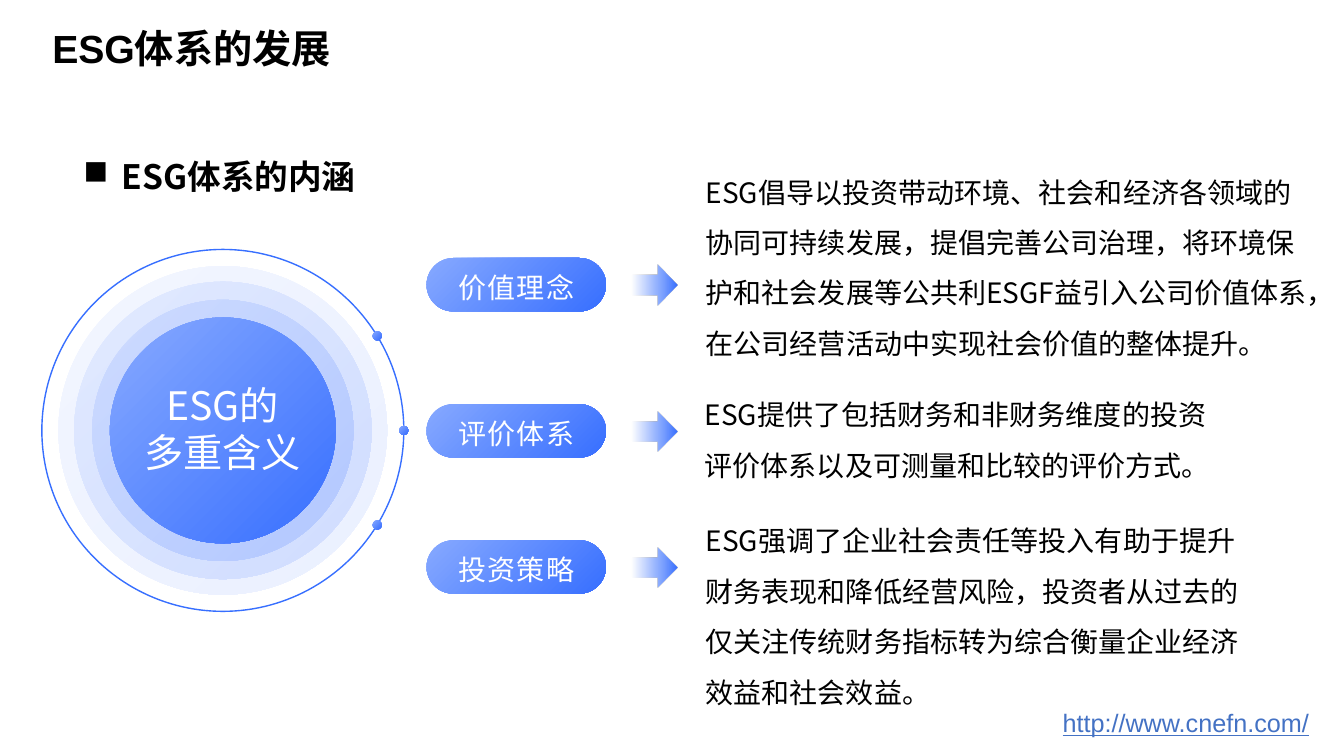
"""Build the slide on the meaning of the ESG system."""
from dataclasses import dataclass, field
from math import cos, radians, sin

from lxml import etree
from pptx import Presentation
from pptx import util as u
from pptx.dml.color import RGBColor
from pptx.enum import lang, shapes, text
from pptx.oxml.ns import qn


@dataclass(frozen=True)
class Theme:
    light: str = "87A9FF"
    deep: str = "376FFF"
    black: str = "000000"
    white: str = "FFFFFF"
    link: str = "4472C4"
    latin: str = "Arial"
    chinese: str = "Noto Sans CJK SC"
    display: int = 28
    heading: int = 24
    body: int = 20
    footer: int = 18


@dataclass(frozen=True)
class Box:
    left: float
    top: float
    width: float
    height: float

    def lengths(self) -> list[int]:
        return [u.Inches(side) for side in (self.left, self.top, self.width, self.height)]


@dataclass(frozen=True)
class Stop:
    position: int
    color: str
    opacity: int = 100


@dataclass(frozen=True)
class Caption:
    box: Box
    lines: list[str]
    size: int
    color: str = "000000"
    name: str = "Noto Sans CJK SC"
    font: dict = field(default_factory=dict)
    paragraph: dict = field(default_factory=dict)
    frame: dict = field(default_factory=dict)
    bullet: str = ""
    spacing: int = 0


@dataclass(frozen=True)
class Meaning:
    label: str
    top: float
    description: str
    box: Box


THEME = Theme()
CENTER_X, CENTER_Y = 2.21, 4.27
ORBIT = 3.59
DOT = 0.09
CENTERED = {"alignment": text.PP_ALIGN.CENTER}
SPACED = {"line_spacing": 1.5}
NO_INSETS = dict.fromkeys(("margin_left", "margin_top", "margin_right", "margin_bottom"), 0)
HALOS = [(3.26, 10), (2.95, 15), (2.59, 20), (2.24, 100)]
ARROW_STOPS = [Stop(3, THEME.light, 0), Stop(50, THEME.light, 80), Stop(100, THEME.deep)]

MEANINGS = [
    Meaning("价值理念", 2.56,
            "ESG倡导以投资带动环境、社会和经济各领域的协同可持续发展，提倡完善公司治理，"
            "将环境保护和社会发展等公共利ESGF益引入公司价值体系，在公司经营活动中实现社会价值的整体提升。",
            Box(7, 1.57, 6.05, 2.02)),
    Meaning("评价体系", 4.01,
            "ESG提供了包括财务和非财务维度的投资评价体系以及可测量和比较的评价方式。",
            Box(6.99, 3.78, 5.02, 1.01)),
    Meaning("投资策略", 5.36,
            "ESG强调了企业社会责任等投入有助于提升财务表现和降低经营风险，"
            "投资者从过去的仅关注传统财务指标转为综合衡量企业经济效益和社会效益。",
            Box(7, 5.03, 5.47, 2.02)),
]

CAPTIONS = [
    Caption(Box(10.44, 6.97, 2.74, 0.4), ["http://www.cnefn.com/"], THEME.footer,
            THEME.link, THEME.latin, font={"underline": True}),
    Caption(Box(0.42, 0.15, 7.31, 0.61), ["ESG体系的发展"], THEME.display,
            name=THEME.latin, font={"bold": True},
            frame={"vertical_anchor": text.MSO_ANCHOR.BOTTOM,
                   "auto_size": text.MSO_AUTO_SIZE.NONE}),
    Caption(Box(0.73, 1.3, 12.03, 0.64), ["ESG体系的内涵"], THEME.heading,
            font={"bold": True}, paragraph=SPACED, bullet="■"),
]


def apply(target: object, values: dict) -> None:
    """Set each named format value on the target."""
    for name, value in values.items():
        setattr(target, name, value)


def add_caption(slide, caption: Caption) -> None:
    """Add a text box with its formatted paragraphs."""
    frame = slide.shapes.add_textbox(*caption.box.lengths()).text_frame
    apply(frame, {"word_wrap": True, "auto_size": text.MSO_AUTO_SIZE.SHAPE_TO_FIT_TEXT,
                  **caption.frame})
    for index, line in enumerate(caption.lines):
        paragraph = frame.add_paragraph() if index else frame.paragraphs[0]
        apply(paragraph, caption.paragraph)
        if caption.bullet:
            properties = paragraph._p.get_or_add_pPr()
            indent = u.Inches(0.38)
            properties.set("marL", str(indent))
            properties.set("indent", str(-indent))
            etree.SubElement(properties, qn("a:buChar"), char=caption.bullet)
        run = paragraph.add_run()
        run.text = line
        apply(run.font, {"size": u.Pt(caption.size), "name": caption.name,
                         "language_id": lang.MSO_LANGUAGE_ID.SIMPLIFIED_CHINESE,
                         **caption.font})
        run.font.color.rgb = RGBColor.from_string(caption.color)
        properties = run._r.get_or_add_rPr()
        etree.SubElement(properties, qn("a:ea"), typeface=THEME.chinese)
        if caption.spacing:
            properties.set("spc", str(caption.spacing * 100))


def add_gradient_shape(slide, kind, box: Box, stops: list[Stop], angle: int = 45):
    """Add a borderless preset shape with a linear gradient."""
    shape = slide.shapes.add_shape(kind, *box.lengths())
    shape.shadow.inherit = False
    shape.line.fill.background()
    gradient = etree.Element(qn("a:gradFill"), rotWithShape="1")
    stop_list = etree.SubElement(gradient, qn("a:gsLst"))
    for stop in stops:
        entry = etree.SubElement(stop_list, qn("a:gs"), pos=str(stop.position * 1000))
        color = etree.SubElement(entry, qn("a:srgbClr"), val=stop.color)
        if stop.opacity < 100:
            etree.SubElement(color, qn("a:alpha"), val=str(stop.opacity * 1000))
    etree.SubElement(gradient, qn("a:lin"), ang=str(angle * 60000), scaled="0")
    shape._element.spPr.find(qn("a:prstGeom")).addnext(gradient)
    return shape


def blue_stops(opacity: int = 100) -> list[Stop]:
    """Return the light to deep blue gradient."""
    return [Stop(0, THEME.light, opacity), Stop(100, THEME.deep, opacity)]


def circle_box(center_x: float, center_y: float, diameter: float) -> Box:
    """Return the square around a circle."""
    return Box(center_x - diameter / 2, center_y - diameter / 2, diameter, diameter)


def add_meaning(slide, meaning: Meaning) -> None:
    """Add a labelled pill, its arrow and its description."""
    pill = add_gradient_shape(slide, shapes.MSO_SHAPE.ROUNDED_RECTANGLE,
                              Box(4.23, meaning.top, 1.78, 0.53), blue_stops())
    pill.adjustments[0] = 0.5
    inner_top = meaning.top + 0.07
    add_caption(slide, Caption(Box(4.42, inner_top, 1.4, 0.44), [meaning.label], THEME.body,
                               THEME.white, paragraph=CENTERED, spacing=1))
    add_gradient_shape(slide, shapes.MSO_SHAPE.RIGHT_ARROW,
                       Box(6.25, inner_top, 0.47, 0.4), ARROW_STOPS, 0)
    add_caption(slide, Caption(meaning.box, [meaning.description], THEME.body,
                               paragraph=SPACED, frame=NO_INSETS))


def add_emblem(slide) -> None:
    """Add the orbit, halos, centre text and orbit dots."""
    oval = shapes.MSO_SHAPE.OVAL
    orbit = slide.shapes.add_shape(oval, *circle_box(CENTER_X, CENTER_Y, ORBIT).lengths())
    orbit.shadow.inherit = False
    orbit.fill.background()
    orbit.line.color.rgb = RGBColor.from_string(THEME.deep)
    orbit.line.width = u.Pt(1)
    for diameter, opacity in HALOS:
        add_gradient_shape(slide, oval, circle_box(CENTER_X, CENTER_Y, diameter),
                           blue_stops(opacity))
    add_caption(slide, Caption(Box(1.13, 3.73, 2.16, 1.04), ["ESG的", "多重含义"],
                               THEME.display, THEME.white, paragraph=CENTERED))
    for angle in (-31.5, 0, 31.5):
        dot_x = CENTER_X + ORBIT / 2 * cos(radians(angle))
        dot_y = CENTER_Y + ORBIT / 2 * sin(radians(angle))
        add_gradient_shape(slide, oval, circle_box(dot_x, dot_y, DOT), blue_stops())


def main() -> None:
    """Build and save the presentation."""
    presentation = Presentation()
    apply(presentation, {"slide_width": u.Inches(13.33), "slide_height": u.Inches(7.5)})
    slide = presentation.slides.add_slide(presentation.slide_layouts[6])
    for caption in CAPTIONS:
        add_caption(slide, caption)
    for meaning in MEANINGS:
        add_meaning(slide, meaning)
    add_emblem(slide)
    presentation.save("out.pptx")


if __name__ == "__main__":
    main()
